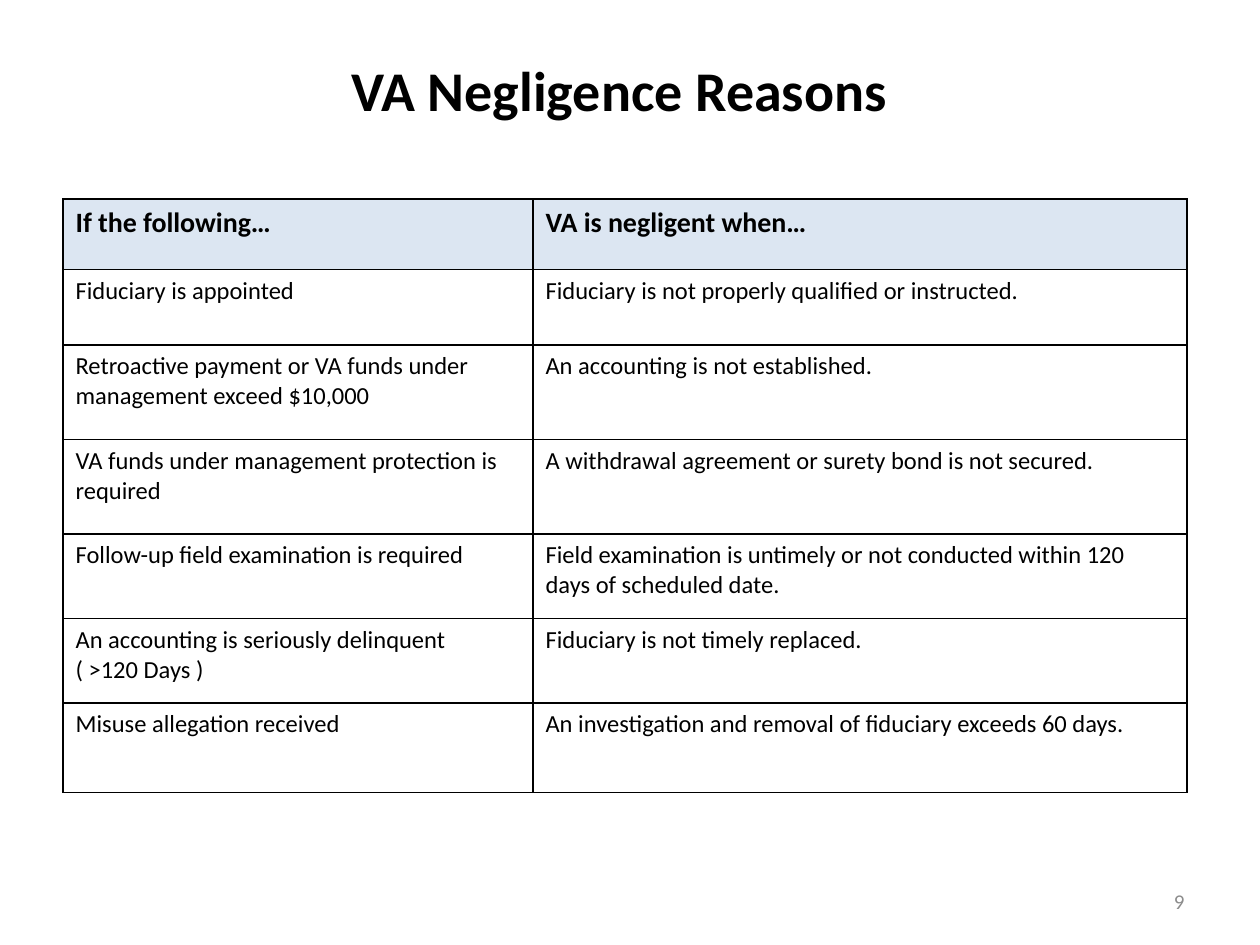
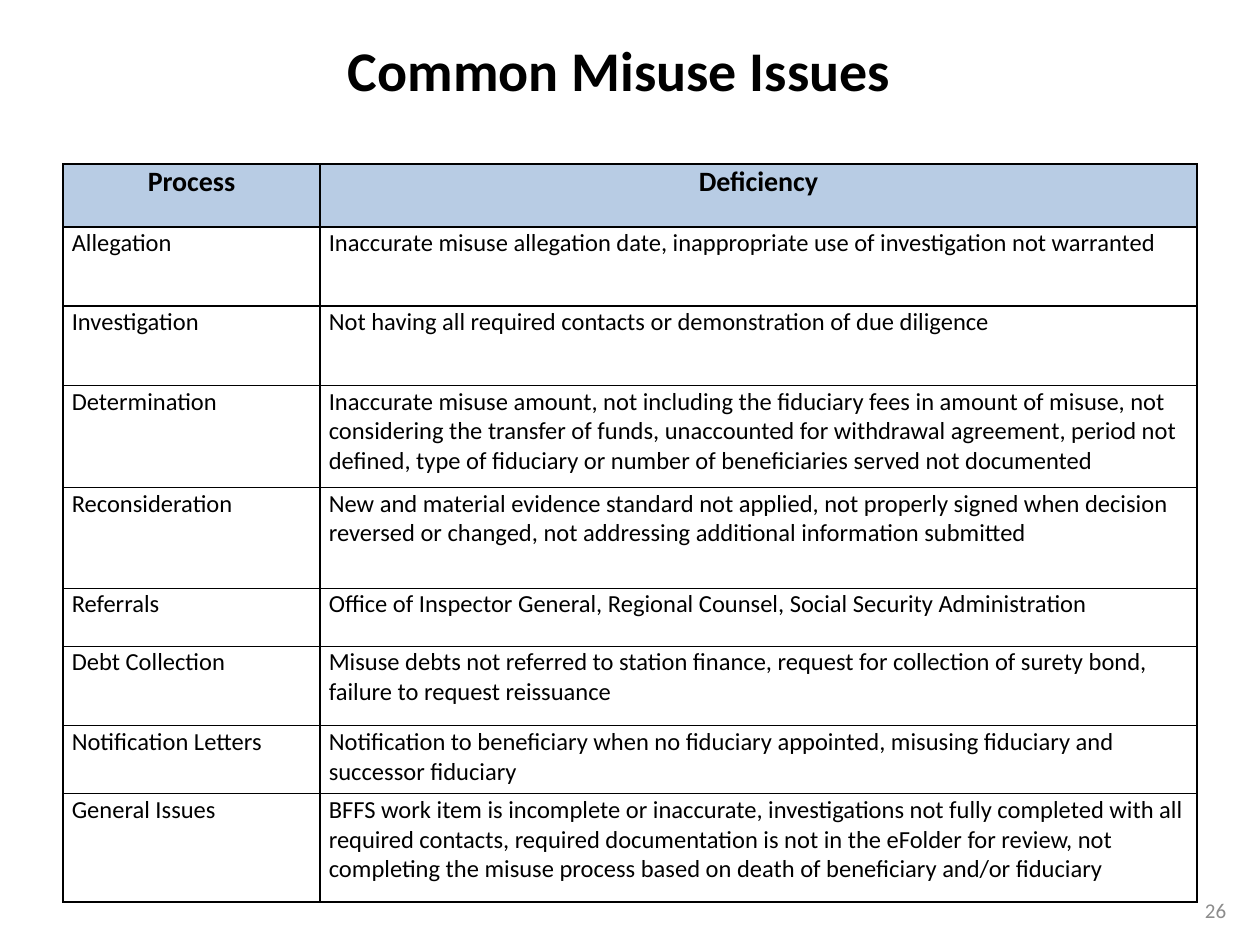
from lxml.etree import SubElement
from pptx import Presentation
from pptx.dml.color import RGBColor
from pptx.enum.text import MSO_ANCHOR, PP_ALIGN
from pptx.oxml.ns import qn
from pptx.util import Inches, Pt

FONT = "Calibri"
BLACK = RGBColor(0x00, 0x00, 0x00)
GRAY = RGBColor(0x8C, 0x8C, 0x8C)
PALE_BLUE = RGBColor(0xDC, 0xE6, 0xF2)
SOFT_BLUE = RGBColor(0xB8, 0xCC, 0xE4)

NEGLIGENCE_ROWS = [
    ("If the following…", "VA is negligent when…"),
    ("Fiduciary is appointed", "Fiduciary is not properly qualified or instructed."),
    ("Retroactive payment or VA funds under management exceed $10,000",
     "An accounting is not established."),
    ("VA funds under management protection is required",
     "A withdrawal agreement or surety bond is not secured."),
    ("Follow-up field examination is required",
     "Field examination is untimely or not conducted within 120 days of scheduled date."),
    ("An accounting is seriously delinquent\n( >120 Days )",
     "Fiduciary is not timely replaced."),
    ("Misuse allegation received",
     "An investigation and removal of fiduciary exceeds 60 days."),
]

MISUSE_ROWS = [
    ("Process", "Deficiency"),
    ("Allegation",
     "Inaccurate misuse allegation date, inappropriate use of investigation not warranted"),
    ("Investigation",
     "Not having all required contacts or demonstration of due diligence"),
    ("Determination",
     "Inaccurate misuse amount, not including the fiduciary fees in amount of misuse, "
     "not considering the transfer of funds, unaccounted for withdrawal agreement, "
     "period not defined, type of fiduciary or number of beneficiaries served not documented"),
    ("Reconsideration",
     "New and material evidence standard not applied, not properly signed when decision "
     "reversed or changed, not addressing additional information submitted"),
    ("Referrals",
     "Office of Inspector General, Regional Counsel, Social Security Administration"),
    ("Debt Collection",
     "Misuse debts not referred to station finance, request for collection of surety bond, "
     "failure to request reissuance"),
    ("Notification Letters",
     "Notification to beneficiary when no fiduciary appointed, misusing fiduciary and "
     "successor fiduciary"),
    ("General Issues",
     "BFFS work item is incomplete or inaccurate, investigations not fully completed with "
     "all required contacts, required documentation is not in the eFolder for review, not "
     "completing the misuse process based on death of beneficiary and/or fiduciary"),
]


def format_text(text_frame, size, color=BLACK, bold=False, align=PP_ALIGN.LEFT):
    for paragraph in text_frame.paragraphs:
        paragraph.alignment = align
        for run in paragraph.runs:
            run.font.name = FONT
            run.font.size = Pt(size)
            run.font.bold = bold
            run.font.color.rgb = color


def add_text(slide, text, left, top, width, height, **style):
    box = slide.shapes.add_textbox(Inches(left), Inches(top), Inches(width), Inches(height))
    text_frame = box.text_frame
    text_frame.word_wrap = True
    text_frame.vertical_anchor = MSO_ANCHOR.MIDDLE
    text_frame.text = text
    format_text(text_frame, **style)


def add_title(slide, text, height):
    add_text(slide, text, 0, 0.08, 9.83, height, size=32, bold=True, align=PP_ALIGN.CENTER)


def add_page_number(slide, number, left, top):
    add_text(slide, str(number), left, top, 2.33, 0.4, size=12, color=GRAY, align=PP_ALIGN.RIGHT)


def add_borders(cell):
    properties = cell._tc.get_or_add_tcPr()
    for side in ("a:lnL", "a:lnR", "a:lnT", "a:lnB"):
        line = SubElement(properties, qn(side), w=str(Pt(1)))
        fill = SubElement(line, qn("a:solidFill"))
        SubElement(fill, qn("a:srgbClr"), val=str(BLACK))


def add_grid(slide, rows, top, column_widths, row_heights, header_fill, header_align, insets):
    frame = slide.shapes.add_table(
        len(rows), len(column_widths), Inches(0.5), Inches(top),
        Inches(sum(column_widths)), Inches(sum(row_heights)))
    table = frame.table
    table.horz_banding = False
    for column, width in zip(table.columns, column_widths):
        column.width = Inches(width)
    for row_index, (texts, height) in enumerate(zip(rows, row_heights)):
        table.rows[row_index].height = Inches(height)
        for column_index, text in enumerate(texts):
            cell = table.cell(row_index, column_index)
            cell.text_frame.text = text
            side, above, below = insets
            cell.margin_left = cell.margin_right = Inches(side)
            cell.margin_top = Inches(above)
            cell.margin_bottom = Inches(below)
            add_borders(cell)
            if row_index == 0:
                cell.fill.solid()
                cell.fill.fore_color.rgb = header_fill
                format_text(cell.text_frame, 16, bold=True, align=header_align)
            else:
                cell.fill.background()
                format_text(cell.text_frame, 14)


def main():
    presentation = Presentation()
    presentation.slide_width = Inches(10)
    presentation.slide_height = Inches(7.5)
    blank = presentation.slide_layouts[6]

    negligence = presentation.slides.add_slide(blank)
    add_title(negligence, "VA Negligence Reasons", 1.25)
    add_grid(negligence, NEGLIGENCE_ROWS, 1.58, [3.73, 5.19],
             [0.56, 0.6, 0.75, 0.75, 0.67, 0.67, 0.71],
             PALE_BLUE, PP_ALIGN.LEFT, (0.1, 0.05, 0.05))
    add_page_number(negligence, 9, 7.17, 6.95)

    misuse = presentation.slides.add_slide(blank)
    add_title(misuse, "Common Misuse Issues", 0.93)
    add_grid(misuse, MISUSE_ROWS, 1.3, [2.04, 6.96],
             [0.5, 0.63, 0.63, 0.81, 0.8, 0.46, 0.63, 0.54, 0.86],
             SOFT_BLUE, PP_ALIGN.CENTER, (0.07, 0.01, 0))
    add_page_number(misuse, 26, 7.5, 7.02)

    presentation.save("out.pptx")


if __name__ == "__main__":
    main()
